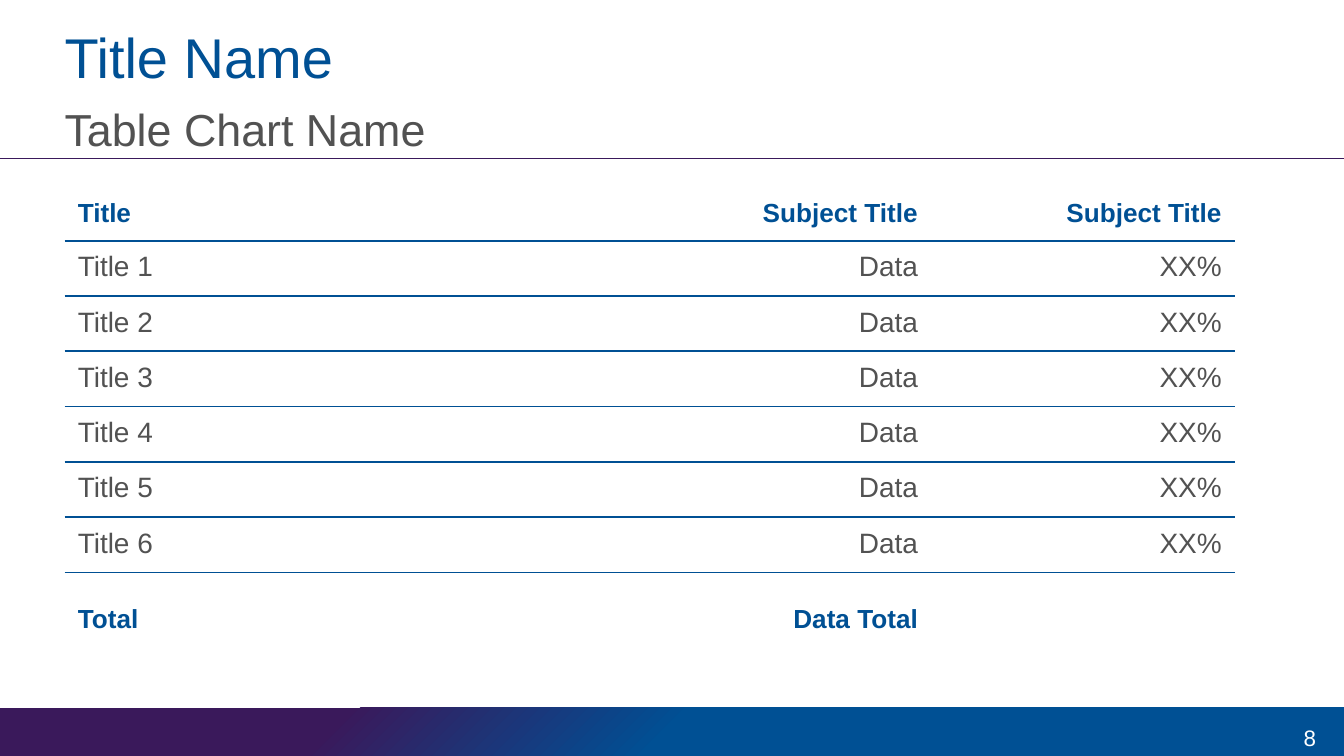
from lxml.etree import SubElement
from pptx import Presentation
from pptx.dml.color import RGBColor
from pptx.enum.shapes import MSO_CONNECTOR as Connector, MSO_SHAPE as Shape
from pptx.enum.text import MSO_ANCHOR as Anchor, PP_ALIGN as Align
from pptx.oxml.ns import qn
from pptx.util import Cm, Pt

BLUE, PURPLE, GREY, WHITE = "005094", "3A195B", "525252", "FFFFFF"
WIDTH, HEIGHT = 25.4, 14.29
MARGIN = 1.22
NO_TABLE_STYLE = "{2D5ABB26-0587-4C30-8999-92F81FD0307C}"

COLUMN_WIDTHS = [8.76, 7.62, 5.74]
HEADER_HEIGHT, ROW_HEIGHT, TOTAL_HEIGHT = 0.99, 1.045, 1.83
ROWS = [
    ["Title", "Subject Title", "Subject Title"],
    *[[f"Title {number}", "Data", "XX%"] for number in range(1, 7)],
    ["Total", "Data Total", ""],
]


def rgb(color):
    return RGBColor.from_string(color)


def write(frame, text, size, color, bold=False, align=Align.LEFT, spacing=None):
    paragraph = frame.paragraphs[0]
    paragraph.alignment = align
    paragraph.line_spacing = spacing
    run = paragraph.add_run()
    run.text = text
    font = run.font
    font.name, font.size, font.bold = "Arial", Pt(size), bold
    font.color.rgb = rgb(color)


def add_text(slide, box, text, insets, anchor=Anchor.TOP, **text_format):
    frame = slide.shapes.add_textbox(*map(Cm, box)).text_frame
    frame.word_wrap = True
    frame.vertical_anchor = anchor
    (frame.margin_left, frame.margin_top,
     frame.margin_right, frame.margin_bottom) = map(Cm, insets)
    write(frame, text, **text_format)


def add_footer_band(slide):
    """Band with a radial gradient centred on its bottom right corner."""
    band = slide.shapes.add_shape(
        Shape.RECTANGLE, Cm(0), Cm(13.38), Cm(WIDTH), Cm(0.91))
    band.shadow.inherit = False
    band.line.fill.background()
    band.fill.gradient()
    gradient = band._element.spPr.find(qn("a:gradFill"))
    gradient.clear()
    stops = SubElement(gradient, qn("a:gsLst"))
    for percent, color in [(0, BLUE), (50, BLUE), (75, PURPLE)]:
        stop = SubElement(stops, qn("a:gs"), pos=str(percent * 1000))
        SubElement(stop, qn("a:srgbClr"), val=color)
    circle = SubElement(gradient, qn("a:path"), path="circle")
    SubElement(circle, qn("a:fillToRect"), l="100000", t="100000")


def add_rule(slide, top):
    rule = slide.shapes.add_connector(
        Connector.STRAIGHT, Cm(0), Cm(top), Cm(WIDTH), Cm(top))
    rule.line.color.rgb = rgb(PURPLE)
    rule.line.width = Pt(0.75)
    SubElement(rule._element.spPr, qn("a:effectLst"))


def add_border(cell, side):
    line = SubElement(cell._tc.get_or_add_tcPr(), qn(f"a:{side}"), w=str(Pt(1)))
    SubElement(SubElement(line, qn("a:solidFill")), qn("a:srgbClr"), val=BLUE)


def add_data_table(slide):
    last = len(ROWS) - 1
    heights = [HEADER_HEIGHT] + [ROW_HEIGHT] * (last - 1) + [TOTAL_HEIGHT]
    frame = slide.shapes.add_table(
        len(ROWS), len(COLUMN_WIDTHS), Cm(MARGIN), Cm(3.56),
        Cm(sum(COLUMN_WIDTHS)), Cm(sum(heights)))
    table = frame.table
    table.horz_banding = False
    table._tbl.tblPr.find(qn("a:tableStyleId")).text = NO_TABLE_STYLE
    for column, width in zip(table.columns, COLUMN_WIDTHS):
        column.width = Cm(width)
    for index, (texts, height) in enumerate(zip(ROWS, heights)):
        table.rows[index].height = Cm(height)
        strong = index in (0, last)
        for column, text in enumerate(texts):
            cell = table.cell(index, column)
            cell.vertical_anchor = Anchor.MIDDLE
            cell.margin_left = cell.margin_right = Cm(0.25)
            cell.margin_top = cell.margin_bottom = Cm(0.1)
            if index > 0:
                add_border(cell, "lnT")
            if index < last:
                add_border(cell, "lnB")
            cell.fill.background()
            if text:
                write(cell.text_frame, text, size=14 if strong else 15,
                      color=BLUE if strong else GREY, bold=strong,
                      align=Align.RIGHT if column else Align.LEFT, spacing=0.9)


def main():
    presentation = Presentation()
    presentation.slide_width, presentation.slide_height = Cm(WIDTH), Cm(HEIGHT)
    slide = presentation.slides.add_slide(presentation.slide_layouts[6])
    add_footer_band(slide)
    add_rule(slide, 3)
    heading_insets = (0, 0, 0, 0.13)
    add_text(slide, (MARGIN, 0.41, 23.19, 1.42), "Title Name", heading_insets,
             anchor=Anchor.MIDDLE, size=30, color=BLUE)
    add_text(slide, (MARGIN, 1.93, 23.19, 1.09), "Table Chart Name",
             heading_insets, size=24, color=GREY)
    add_data_table(slide)
    add_text(slide, (23.7, 13.49, 1.42, 0.91), "8", (0.25, 0.13, 0.25, 0.13),
             anchor=Anchor.MIDDLE, size=12, color=WHITE, align=Align.RIGHT)
    presentation.save("out.pptx")


if __name__ == "__main__":
    main()
